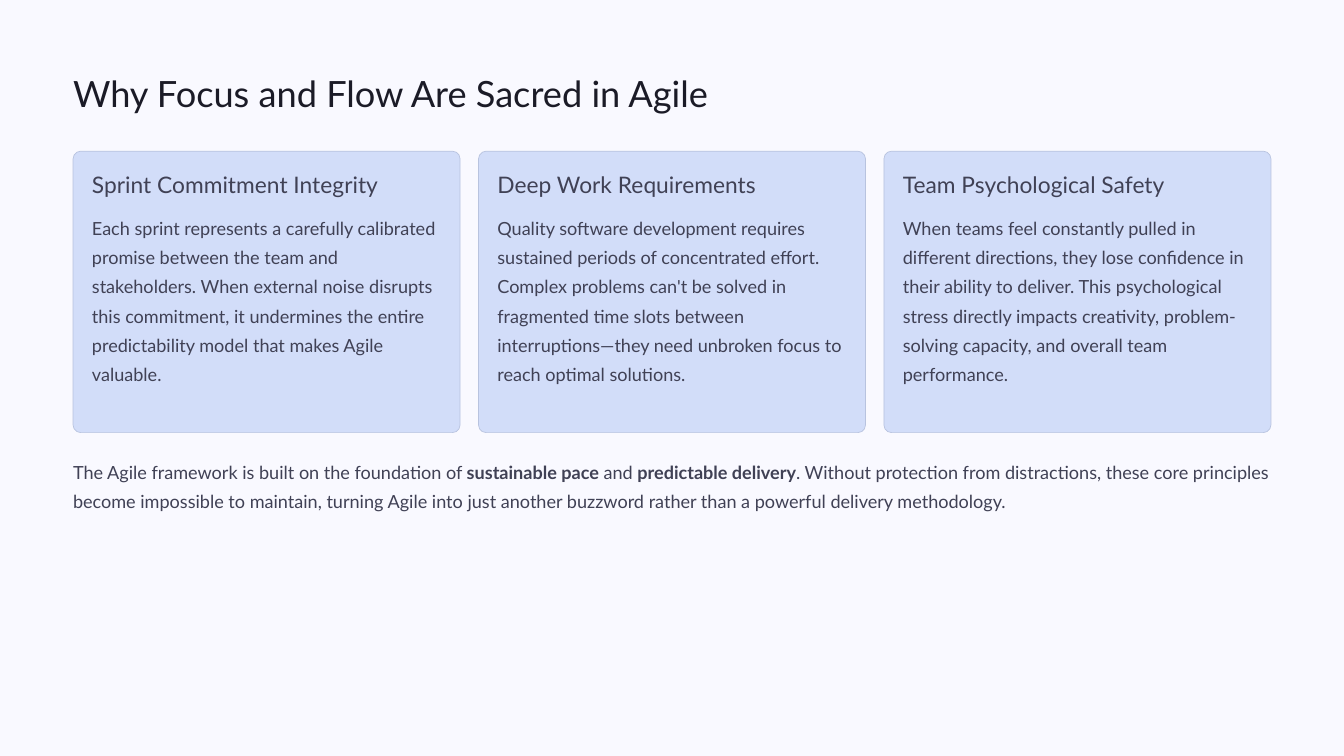
from pptx import Presentation
from pptx.dml.color import RGBColor
from pptx.enum.shapes import MSO_SHAPE
from pptx.util import Inches, Pt

WIDE, HIGH = 16, 9
EDGE, GAP, COLS = 0.87, 0.22, 3
SPAN = WIDE - 2 * EDGE
COL = (SPAN - GAP * (COLS - 1)) / COLS
TOP, TALL, PAD = 1.8, 3.35, 0.225

HUES = {
    "page": "F9F9FF",
    "title": "1B1B27",
    "text": "404155",
    "card": "D2DDF9",
    "edge": "B8C3DF",
}

CARDS = [
    ("Sprint Commitment Integrity",
     "Each sprint represents a carefully calibrated promise between the team "
     "and stakeholders. When external noise disrupts this commitment, it "
     "undermines the entire predictability model that makes Agile valuable."),
    ("Deep Work Requirements",
     "Quality software development requires sustained periods of concentrated "
     "effort. Complex problems can't be solved in fragmented time slots between "
     "interruptions—they need unbroken focus to reach optimal solutions."),
    ("Team Psychological Safety",
     "When teams feel constantly pulled in different directions, they lose "
     "confidence in their ability to deliver. This psychological stress directly "
     "impacts creativity, problem-solving capacity, and overall team performance."),
]

# Every second part is bold
CLOSE = [
    "The Agile framework is built on the foundation of ",
    "sustainable pace",
    " and ",
    "predictable delivery",
    ". Without protection from distractions, these core principles become "
    "impossible to maintain, turning Agile into just another buzzword rather "
    "than a powerful delivery methodology.",
]


def tint(name):
    return RGBColor.from_string(HUES[name])


def write(slide, box, *parts, size=15.5, lead=25, hue="text"):
    """Add a text box; parts alternate between regular and bold."""
    frame = slide.shapes.add_textbox(*map(Inches, box)).text_frame
    frame.word_wrap = True
    frame.margin_left = frame.margin_right = 0
    frame.margin_top = frame.margin_bottom = 0
    para = frame.paragraphs[0]
    para.line_spacing = Pt(lead)
    for i, part in enumerate(parts):
        run = para.add_run()
        run.text = part
        font = run.font
        font.name, font.size, font.bold = "Lato", Pt(size), i % 2 == 1
        font.color.rgb = tint(hue)


def card(slide, col, head, body):
    left = EDGE + col * (COL + GAP)
    box = slide.shapes.add_shape(
        MSO_SHAPE.ROUNDED_RECTANGLE, *map(Inches, (left, TOP, COL, TALL)))
    box.adjustments[0] = 0.027
    box.shadow.inherit = False
    box.fill.solid()
    box.fill.fore_color.rgb = tint("card")
    box.line.color.rgb = tint("edge")
    box.line.width = Pt(0.6)

    left, wide = left + PAD, COL - 2 * PAD
    write(slide, (left, TOP + 0.23, wide, 0.34), head, size=19.5, lead=24)
    write(slide, (left, TOP + 0.7, wide, 2.43), body)


def main():
    deck = Presentation()
    deck.slide_width, deck.slide_height = Inches(WIDE), Inches(HIGH)
    slide = deck.slides.add_slide(deck.slide_layouts[6])
    fill = slide.background.fill
    fill.solid()
    fill.fore_color.rgb = tint("page")

    # Title
    write(slide, (EDGE, 0.83, SPAN, 0.54),
          "Why Focus and Flow Are Sacred in Agile",
          size=31, lead=39, hue="title")

    # Cards
    for col, (head, body) in enumerate(CARDS):
        card(slide, col, head, body)

    # Closing text
    write(slide, (EDGE, 5.4, SPAN, 1.04), *CLOSE)

    deck.save("out.pptx")


if __name__ == "__main__":
    main()
